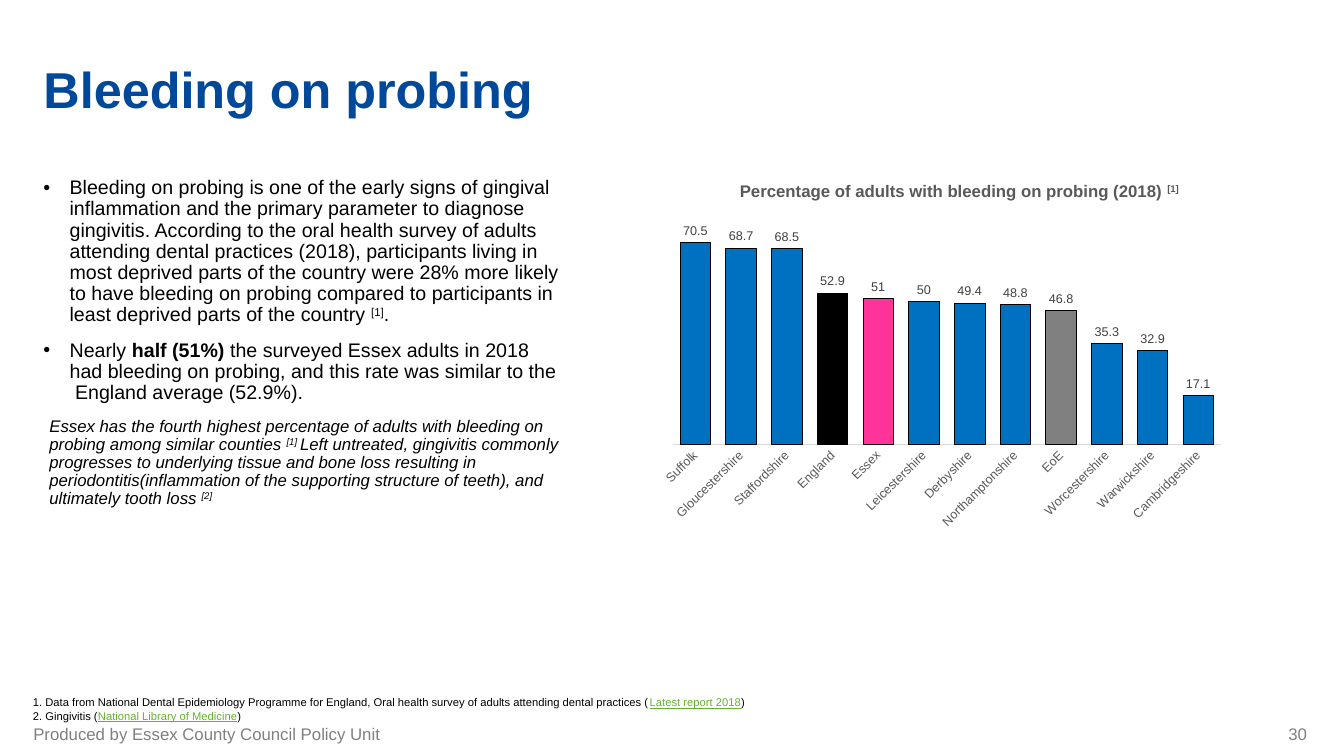
from dataclasses import dataclass

import lxml.etree
import pptx
import pptx.chart.data
import pptx.dml.color
import pptx.enum.chart
import pptx.enum.text
import pptx.oxml.ns
import pptx.util

RGBColor = pptx.dml.color.RGBColor
Cm = pptx.util.Cm
Pt = pptx.util.Pt
Align = pptx.enum.text.PP_ALIGN
Anchor = pptx.enum.text.MSO_ANCHOR

BLACK = RGBColor(0x00, 0x00, 0x00)
TITLE_BLUE = RGBColor(0x00, 0x48, 0x99)
BAR_BLUE = RGBColor(0x00, 0x70, 0xC0)
ESSEX_PINK = RGBColor(0xFF, 0x33, 0x99)
GREY = RGBColor(0x80, 0x80, 0x80)
DARK_GREY = RGBColor(0x59, 0x59, 0x59)
LABEL_GREY = RGBColor(0x40, 0x40, 0x40)
AXIS_GREY = RGBColor(0xD9, 0xD9, 0xD9)
LINK_GREEN = RGBColor(0x65, 0xB2, 0x2E)


@dataclass
class Phrase:
    text: str
    bold: bool = False
    superscript: bool = False
    link: bool = False


@dataclass
class BodyParagraph:
    phrases: list[Phrase]
    size: int = 14
    bulleted: bool = True


@dataclass
class TextBox:
    box: tuple[float, float, float, float]
    lines: list[list[Phrase]]
    size: int
    color: RGBColor
    margins: tuple[float, float] = (0.25, 0.25)
    anchor: Anchor = Anchor.TOP
    alignment: Align = Align.LEFT


BODY = [
    BodyParagraph([
        Phrase("Bleeding on probing is one of the early signs of gingival inflammation and the "
               "primary parameter to diagnose gingivitis. According to the oral health survey of "
               "adults attending dental practices (2018), participants living in most deprived "
               "parts of the country were 28% more likely to have bleeding on probing compared "
               "to participants in least deprived parts of the country "),
        Phrase("[1]", superscript=True),
        Phrase("."),
    ]),
    BodyParagraph([
        Phrase("Nearly "),
        Phrase("half (51%)", bold=True),
        Phrase(" the surveyed Essex adults in 2018 had bleeding on probing, and this rate was "
               "similar to the  England average (52.9%)."),
    ]),
    BodyParagraph([
        Phrase("Essex has the fourth highest percentage of adults with bleeding on probing among "
               "similar counties "),
        Phrase("[1] ", superscript=True),
        Phrase("Left untreated, gingivitis commonly progresses to underlying tissue and bone "
               "loss resulting in periodontitis(inflammation of the supporting structure of "
               "teeth), and ultimately tooth loss "),
        Phrase("[2]", superscript=True),
    ], size=12, bulleted=False),
]

TEXT_BOXES = [
    TextBox((0.58, 17.4, 24.92, 0.94), [
        [Phrase("1. Data from National Dental Epidemiology Programme for England, Oral health "
                "survey of adults attending dental practices ("),
         Phrase("Latest report 2018", link=True), Phrase(")")],
        [Phrase("2. Gingivitis ("), Phrase("National Library of Medicine", link=True),
         Phrase(")")],
    ], 8, BLACK),
    TextBox((0.84, 18.31, 16, 0.38), [[Phrase("Produced by Essex County Council Policy Unit")]],
            12, GREY, (0, 0.25), Anchor.MIDDLE),
    TextBox((30.78, 18.31, 2.16, 0.38), [[Phrase("30")]],
            12, GREY, (0.25, 0), Anchor.MIDDLE, Align.RIGHT),
]

BLEEDING_RATES = {
    "Suffolk": 70.5, "Gloucestershire": 68.7, "Staffordshire": 68.5, "England": 52.9,
    "Essex": 51, "Leicestershire": 50, "Derbyshire": 49.4, "Northamptonshire": 48.8,
    "EoE": 46.8, "Worcestershire": 35.3, "Warwickshire": 32.9, "Cambridgeshire": 17.1,
}
HIGHLIGHTS = {"England": BLACK, "Essex": ESSEX_PINK, "EoE": GREY}


def place(shape, left: float, top: float, width: float, height: float) -> None:
    shape.left, shape.top, shape.width, shape.height = map(Cm, (left, top, width, height))


def set_font(font, size: int, color: RGBColor, bold: bool = False) -> None:
    font.name, font.size, font.bold = "Arial", Pt(size), bold
    font.color.rgb = color


def add_phrases(paragraph, phrases: list[Phrase]) -> None:
    for phrase in phrases:
        run = paragraph.add_run()
        run.text = phrase.text
        if phrase.bold:
            run.font.bold = True
        if phrase.superscript:
            run._r.get_or_add_rPr().set("baseline", "30000")
        if phrase.link:
            run.font.underline = True
            run.font.color.rgb = LINK_GREEN


def paragraphs_for(text_frame, count: int) -> list:
    return [text_frame.paragraphs[0]] + [text_frame.add_paragraph() for _ in range(count - 1)]


def fill_title(title) -> None:
    place(title, 0.84, 0.71, 32.08, 2.29)
    title.text_frame.text = "Bleeding on probing"
    title.text_frame.vertical_anchor = Anchor.BOTTOM
    title.text_frame.margin_bottom = 0
    title.text_frame.auto_size = pptx.enum.text.MSO_AUTO_SIZE.NONE
    paragraph = title.text_frame.paragraphs[0]
    paragraph.alignment = Align.LEFT
    paragraph.line_spacing = 0.9
    set_font(paragraph.font, 36, TITLE_BLUE, bold=True)


def fill_body(body) -> None:
    place(body, 0.84, 3.48, 13.51, 13.67)
    text_frame = body.text_frame
    text_frame.margin_top = Cm(1)
    text_frame.auto_size = pptx.enum.text.MSO_AUTO_SIZE.NONE
    for paragraph, content in zip(paragraphs_for(text_frame, len(BODY)), BODY):
        paragraph.line_spacing = 0.9
        paragraph.space_before = Pt(10)
        properties = paragraph._p.get_or_add_pPr()
        indent = Cm(0.66) if content.bulleted else 0
        properties.set("marL", str(indent or Cm(0.15)))
        properties.set("indent", str(-indent))
        if not content.bulleted:
            lxml.etree.SubElement(properties, pptx.oxml.ns.qn("a:buNone"))
        set_font(paragraph.font, content.size, BLACK)
        paragraph.font.italic = not content.bulleted
        add_phrases(paragraph, content.phrases)


def add_text_box(slide, item: TextBox) -> None:
    text_frame = slide.shapes.add_textbox(*map(Cm, item.box)).text_frame
    text_frame.word_wrap = True
    text_frame.vertical_anchor = item.anchor
    text_frame.margin_left, text_frame.margin_right = map(Cm, item.margins)
    for paragraph, phrases in zip(paragraphs_for(text_frame, len(item.lines)), item.lines):
        paragraph.alignment = item.alignment
        set_font(paragraph.font, item.size, item.color)
        add_phrases(paragraph, phrases)


def set_layout(element, position: int, **fractions: float) -> None:
    qn = pptx.oxml.ns.qn
    for old_layout in element.findall(qn("c:layout")):
        element.remove(old_layout)
    layout = lxml.etree.Element(qn("c:layout"))
    manual = lxml.etree.SubElement(layout, qn("c:manualLayout"))
    settings = {"xMode": "edge", "yMode": "edge"} | fractions
    if "w" in fractions:
        settings = {"layoutTarget": "inner"} | settings
    for name, value in settings.items():
        lxml.etree.SubElement(manual, qn(f"c:{name}")).set("val", str(value))
    element.insert(position, layout)


def add_rate_chart(slide) -> None:
    data = pptx.chart.data.CategoryChartData()
    data.categories = list(BLEEDING_RATES)
    data.add_series("Series 1", list(BLEEDING_RATES.values()))
    chart = slide.shapes.add_chart(
        pptx.enum.chart.XL_CHART_TYPE.COLUMN_CLUSTERED,
        Cm(16.36), Cm(4.11), Cm(14.71), Cm(9.45), data).chart
    set_font(chart.font, 10, BLACK)
    chart.has_legend = False
    title_paragraph = chart.chart_title.text_frame.paragraphs[0]
    set_font(title_paragraph.font, 12, DARK_GREY, bold=True)
    add_phrases(title_paragraph, [
        Phrase("Percentage of adults with bleeding on probing (2018) "),
        Phrase("[1]", superscript=True)])
    set_layout(chart.chart_title._element, 1, x=0.15, y=0.04)
    set_layout(chart._chartSpace.chart.plotArea, 0, x=0.04, y=0.14, w=0.94, h=0.61)

    value_axis = chart.value_axis
    value_axis.minimum_scale, value_axis.maximum_scale = 0, 80
    value_axis.has_major_gridlines = False
    value_axis.visible = False
    category_axis = chart.category_axis
    category_axis.major_tick_mark = pptx.enum.chart.XL_TICK_MARK.NONE
    category_axis.format.line.color.rgb = AXIS_GREY
    category_axis.format.line.width = Pt(0.75)
    set_font(category_axis.tick_labels.font, 9, DARK_GREY)
    category_axis._element.txPr.bodyPr.set("rot", "-2700000")

    plot = chart.plots[0]
    plot.gap_width, plot.overlap, plot.vary_by_categories = 50, -27, False
    plot.has_data_labels = True
    plot.data_labels.show_value = True
    plot.data_labels.position = pptx.enum.chart.XL_LABEL_POSITION.OUTSIDE_END
    set_font(plot.data_labels.font, 9, LABEL_GREY)
    series = plot.series[0]
    highlighted = [(series.points[list(BLEEDING_RATES).index(area)].format, color)
                   for area, color in HIGHLIGHTS.items()]
    for bar_format, color in [(series.format, BAR_BLUE)] + highlighted:
        bar_format.fill.solid()
        bar_format.fill.fore_color.rgb = color
        bar_format.line.color.rgb = BLACK
        bar_format.line.width = Pt(0.5)


def main() -> None:
    presentation = pptx.Presentation()
    presentation.slide_width, presentation.slide_height = Cm(33.87), Cm(19.05)
    slide = presentation.slides.add_slide(presentation.slide_layouts[1])
    fill_title(slide.shapes.title)
    fill_body(slide.placeholders[1])
    add_rate_chart(slide)
    for item in TEXT_BOXES:
        add_text_box(slide, item)
    presentation.save("out.pptx")


if __name__ == "__main__":
    main()
